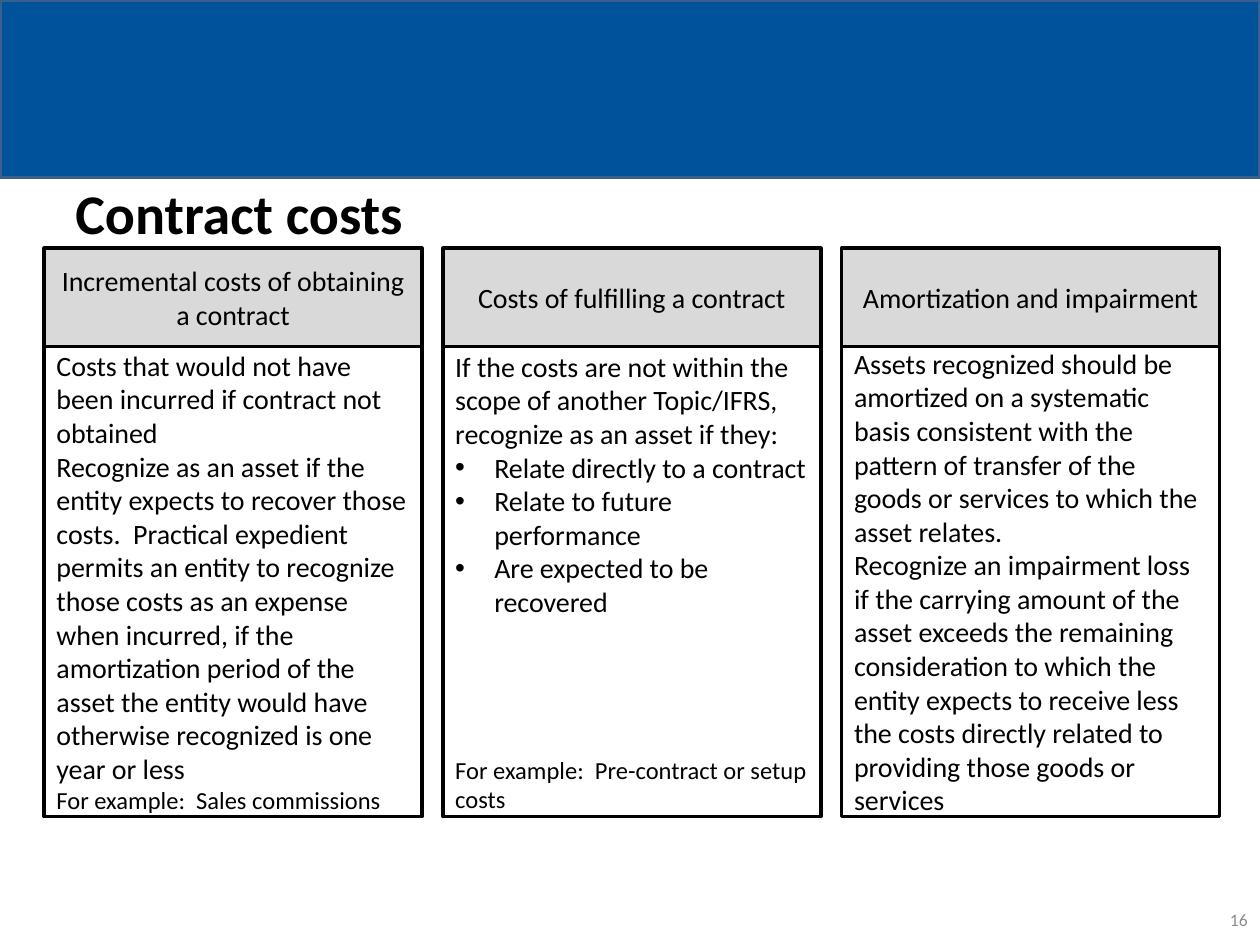
"""Build the slide on contract costs with three headed columns."""
import pptx
import pptx.util
import pptx.dml.color
import pptx.enum.shapes
import pptx.enum.text
from lxml import etree
from pptx.oxml.ns import qn

Inches = pptx.util.Inches
Pt = pptx.util.Pt
RGBColor = pptx.dml.color.RGBColor
PP_ALIGN = pptx.enum.text.PP_ALIGN

BLUE = RGBColor(0x00, 0x53, 0x9B)
BLUE_EDGE = RGBColor(0x3A, 0x5F, 0x8C)
GRAY = RGBColor(0xD9, 0xD9, 0xD9)
NUMBER_GRAY = RGBColor(0x8C, 0x8C, 0x8C)
BLACK = RGBColor(0, 0, 0)

TITLE = "Contract costs"
PAGE_NUMBER = "16"
COLUMNS = [
    {
        "heading": "Incremental costs of obtaining a contract",
        "body": [
            ("text", "Costs that would not have been incurred if contract not obtained"),
            ("text", "Recognize as an asset if the entity expects to recover those costs.  "
                     "Practical expedient permits an entity to recognize those costs as an "
                     "expense when incurred, if the amortization period of the asset the "
                     "entity would have otherwise recognized is one year or less"),
            ("example", "For example:  Sales commissions"),
        ],
    },
    {
        "heading": "Costs of fulfilling a contract",
        "body": [
            ("text", "If the costs are not within the scope of another Topic/IFRS, "
                     "recognize as an asset if they:"),
            ("bullet", "Relate directly to a contract"),
            ("bullet", "Relate to future performance"),
            ("bullet", "Are expected to be recovered"),
            ("example", "For example:  Pre-contract or setup costs"),
        ],
        "example_gap": 78,
    },
    {
        "heading": "Amortization and impairment",
        "body": [
            ("text", "Assets recognized should be amortized on a systematic basis consistent "
                     "with the pattern of transfer of the goods or services to which the "
                     "asset relates."),
            ("text", "Recognize an impairment loss if the carrying amount of the asset exceeds "
                     "the remaining consideration to which the entity expects to receive less "
                     "the costs directly related to providing those goods or services"),
        ],
    },
]

COLUMN_LEFT, COLUMN_STEP, COLUMN_WIDTH = 0.35, 3.165, 3
HEADING_TOP, HEADING_HEIGHT, BODY_HEIGHT = 1.97, 0.78, 3.73
BULLET_INDENT = 0.31


def add_box(slide, left, top, width, height, fill=None, edge=BLACK):
    box = slide.shapes.add_shape(
        pptx.enum.shapes.MSO_SHAPE.RECTANGLE,
        Inches(left), Inches(top), Inches(width), Inches(height))
    box.shadow.inherit = False
    if fill is None:
        box.fill.background()
    else:
        box.fill.solid()
        box.fill.fore_color.rgb = fill
    box.line.color.rgb = edge
    box.line.width = Pt(2)
    return box


def prepare_frame(box):
    frame = box.text_frame
    frame.word_wrap = True
    frame.vertical_anchor = pptx.enum.text.MSO_ANCHOR.MIDDLE
    return frame


def write(paragraph, text, size=16, color=BLACK, bold=False, align=PP_ALIGN.LEFT):
    paragraph.text = text
    paragraph.alignment = align
    font = paragraph.runs[0].font
    font.name = "Calibri"
    font.size = Pt(size)
    font.bold = bold
    font.color.rgb = color


def add_bullet(paragraph):
    properties = paragraph._p.get_or_add_pPr()
    properties.set("marL", str(Inches(BULLET_INDENT)))
    properties.set("indent", str(-Inches(BULLET_INDENT)))
    etree.SubElement(properties, qn("a:buFont")).set("typeface", "Arial")
    etree.SubElement(properties, qn("a:buChar")).set("char", "•")


def add_label(slide, left, top, width, height, text, **style):
    label = slide.shapes.add_textbox(
        Inches(left), Inches(top), Inches(width), Inches(height))
    write(prepare_frame(label).paragraphs[0], text, **style)


def add_body(slide, left, column):
    box = add_box(slide, left, HEADING_TOP + HEADING_HEIGHT, COLUMN_WIDTH, BODY_HEIGHT)
    frame = prepare_frame(box)
    for index, (role, text) in enumerate(column["body"]):
        paragraph = frame.add_paragraph() if index else frame.paragraphs[0]
        if role == "bullet":
            add_bullet(paragraph)
        write(paragraph, text, size=14 if role == "example" else 16)
        if role == "example" and "example_gap" in column:
            paragraph.space_before = Pt(column["example_gap"])


def add_heading(slide, left, column):
    box = add_box(slide, left, HEADING_TOP, COLUMN_WIDTH, HEADING_HEIGHT, GRAY)
    write(prepare_frame(box).paragraphs[0], column["heading"], align=PP_ALIGN.CENTER)


def main():
    deck = pptx.Presentation()
    deck.slide_width, deck.slide_height = Inches(10), Inches(7.5)
    slide = deck.slides.add_slide(deck.slide_layouts[6])
    add_box(slide, 0, 0, 10, 1.41, BLUE, BLUE_EDGE)
    add_label(slide, 0.5, 1.32, 9, 0.72, TITLE, size=32, bold=True)
    add_label(slide, 7.67, 7.1, 2.33, 0.4, PAGE_NUMBER, size=10,
              color=NUMBER_GRAY, align=PP_ALIGN.RIGHT)
    for add_part in (add_body, add_heading):
        for index, column in enumerate(COLUMNS):
            add_part(slide, COLUMN_LEFT + index * COLUMN_STEP, column)
    deck.save("out.pptx")


if __name__ == "__main__":
    main()
